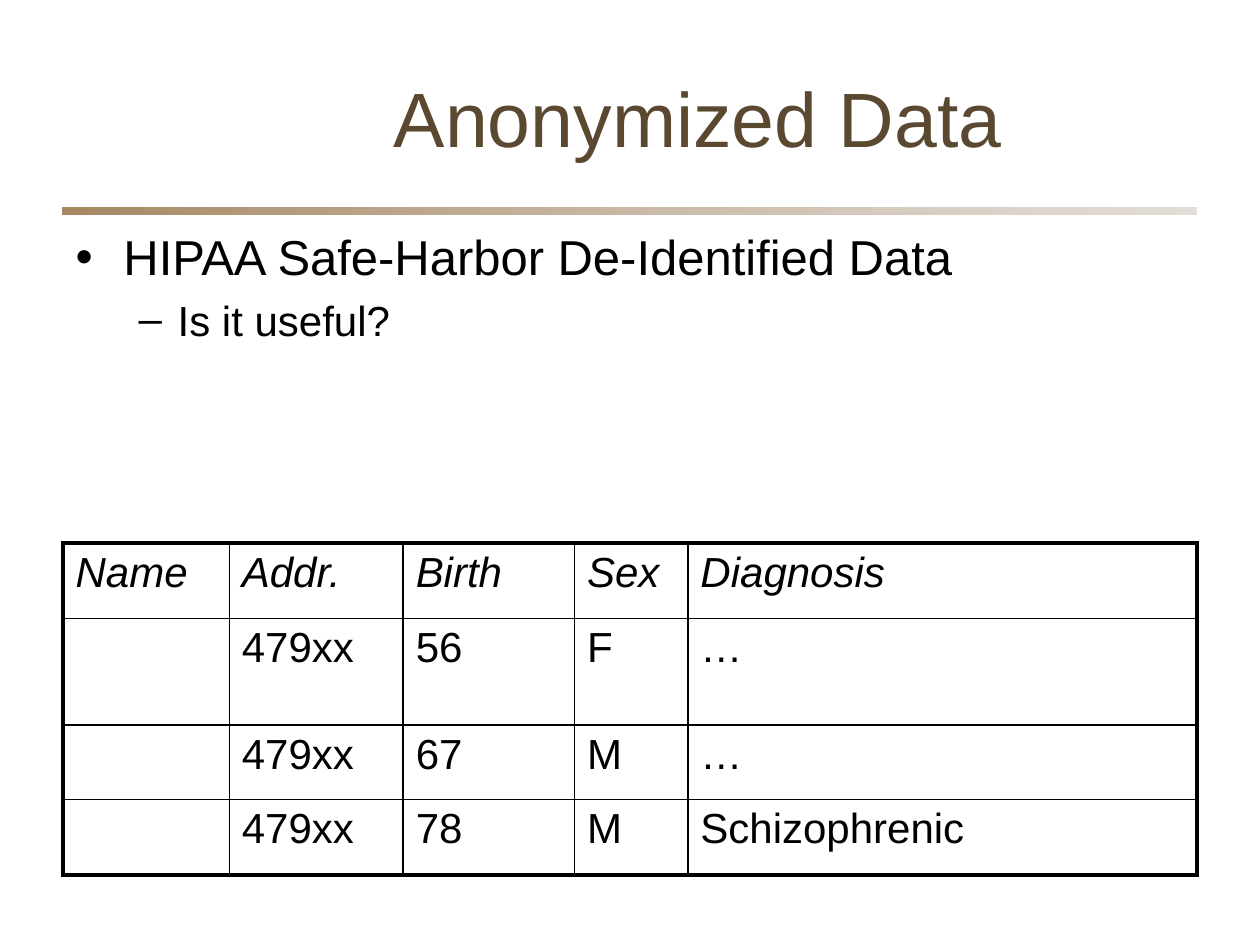
"""Build the slide on anonymized data, with its title, list and table."""
import pptx
import pptx.dml.color
import pptx.enum.shapes
import pptx.enum.text
import pptx.oxml
import pptx.oxml.ns
import pptx.util
import lxml.etree

RGB = pptx.dml.color.RGBColor
BROWN = RGB(0x5A, 0x48, 0x30)
TAN = RGB(0x9D, 0x7D, 0x53)
SAND = RGB(0xD4, 0xCA, 0xC1)
BLACK = RGB(0, 0, 0)
FONT = "Arial"
COLS, ROWS = 20, 15
THIN, THICK = 1, 2.25

LIST = [
    (0, "•", 0.38, -0.38, 28, "HIPAA Safe-Harbor De-Identified Data"),
    (1, "–", 0.81, -0.31, 24, "Is it useful?"),
]
DATA = [
    ["Name", "Addr.", "Birth", "Sex", "Diagnosis"],
    ["", "479xx", "56", "F", "…"],
    ["", "479xx", "67", "M", "…"],
    ["", "479xx", "78", "M", "Schizophrenic"],
]
WIDTHS = [2.64, 2.76, 2.72, 1.8, 8.08]
HEIGHTS = [1.2, 1.69, 1.18, 1.2]


def tag(node, name, **attrs):
    """Add a drawing element below a node and return it."""
    return lxml.etree.SubElement(node, pptx.oxml.ns.qn("a:" + name), **attrs)


class Deck:
    """Holds the style, the grid and the current slide."""

    def __init__(self):
        """Open a deck with one title and content slide."""
        self.prs = pptx.Presentation()
        self.prs.slide_width = pptx.util.Inches(10)
        self.prs.slide_height = pptx.util.Inches(7.5)
        self.slide = self.prs.slides.add_slide(self.prs.slide_layouts[1])

    def col(self, n):
        """Turn grid columns into a length."""
        return round(self.prs.slide_width * n / COLS)

    def row(self, n):
        """Turn grid rows into a length."""
        return round(self.prs.slide_height * n / ROWS)

    def box(self, x, y, w, h):
        """Turn a grid box into left, top, width and height."""
        return self.col(x), self.row(y), self.col(w), self.row(h)

    def place(self, shape, *grid):
        """Move a placeholder to a grid box and keep its text size."""
        shape.left, shape.top, shape.width, shape.height = self.box(*grid)
        shape.text_frame.auto_size = pptx.enum.text.MSO_AUTO_SIZE.NONE

    def style(self, para, size, color=BLACK, slant=False):
        """Format the runs of a paragraph."""
        for run in para.runs:
            run.font.name = FONT
            run.font.size = pptx.util.Pt(size)
            run.font.color.rgb = color
            run.font.italic = slant

    def title(self, text, *grid):
        """Fill the title placeholder."""
        shape = self.slide.shapes.title
        self.place(shape, *grid)
        shape.text_frame.text = text
        shape.text_frame.vertical_anchor = pptx.enum.text.MSO_ANCHOR.MIDDLE
        para = shape.text_frame.paragraphs[0]
        para.alignment = pptx.enum.text.PP_ALIGN.CENTER
        self.style(para, 44, BROWN)

    def list(self, items, *grid):
        """Fill the body placeholder with bulleted items."""
        shape = self.slide.placeholders[1]
        self.place(shape, *grid)
        frame = shape.text_frame
        frame.text = "\n".join(item[-1] for item in items)
        for para, (level, mark, left, hang, size, _) in zip(frame.paragraphs, items):
            para.level = level
            props = para._p.get_or_add_pPr()
            props.set("marL", str(pptx.util.Inches(left)))
            props.set("indent", str(pptx.util.Inches(hang)))
            tag(props, "buFont", typeface=FONT)
            tag(props, "buChar", char=mark)
            self.style(para, size)

    def rule(self, *grid):
        """Draw the fading bar behind all else."""
        kind = pptx.enum.shapes.MSO_SHAPE.RECTANGLE
        bar = self.slide.shapes.add_shape(kind, *self.box(*grid))
        bar.shadow.inherit = False
        bar.line.fill.background()
        bar.fill.gradient()
        bar.fill.gradient_angle = 0
        stops = bar.fill.gradient_stops
        for stop, place, color, alpha in zip(stops, (0, 1), (TAN, SAND), (91, 63)):
            stop.position = place
            stop.color.rgb = color
            tag(stop._gs[0], "alpha", val=str(alpha * 1000))
        self.slide.shapes._spTree.insert(2, bar._element)

    def edge(self, cell, sides):
        """Draw the borders of a cell from their widths."""
        props = cell._tc.get_or_add_tcPr()
        for side, width in sides.items():
            line = tag(props, "ln" + side, w=str(pptx.util.Pt(width)))
            tag(tag(line, "solidFill"), "srgbClr", val=str(BLACK))

    def table(self, data, x, y, widths, heights):
        """Add a plain table with a thick frame and a slanted head."""
        size = len(data), len(widths)
        grid = self.box(x, y, sum(widths), sum(heights))
        table = self.slide.shapes.add_table(*size, *grid).table
        table.first_row = table.horz_banding = False
        for column, width in zip(table.columns, widths):
            column.width = self.col(width)
        for line, height in zip(table.rows, heights):
            line.height = self.row(height)
        for r, texts in enumerate(data):
            for c, text in enumerate(texts):
                cell = table.cell(r, c)
                ends = {"L": c == 0, "R": c == size[1] - 1,
                        "T": r == 0, "B": r == size[0] - 1}
                self.edge(cell, {k: THICK if end else THIN for k, end in ends.items()})
                cell.fill.background()
                cell.text_frame.text = text
                self.style(cell.text_frame.paragraphs[0], 24, slant=r == 0)


def main():
    """Build and save the slide."""
    deck = Deck()
    deck.rule(1, 3.3, 18, 0.1)
    deck.title("Anonymized Data", 3.16, 0.6, 15.84, 2.5)
    deck.list(LIST, 1, 3.5, 18, 4.78)
    deck.table(DATA, 1, 8.62, WIDTHS, HEIGHTS)
    deck.prs.save("out.pptx")


if __name__ == "__main__":
    main()
